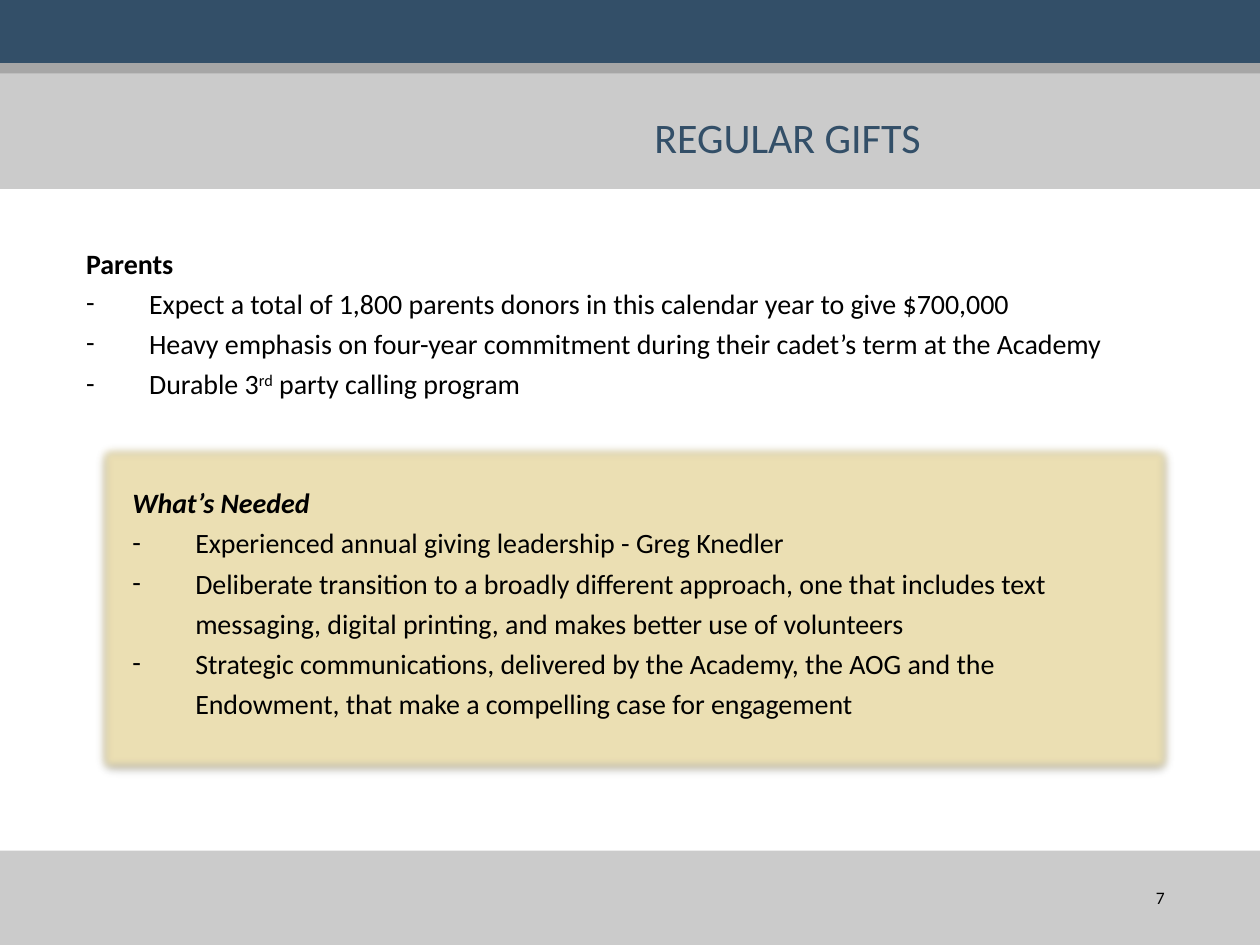
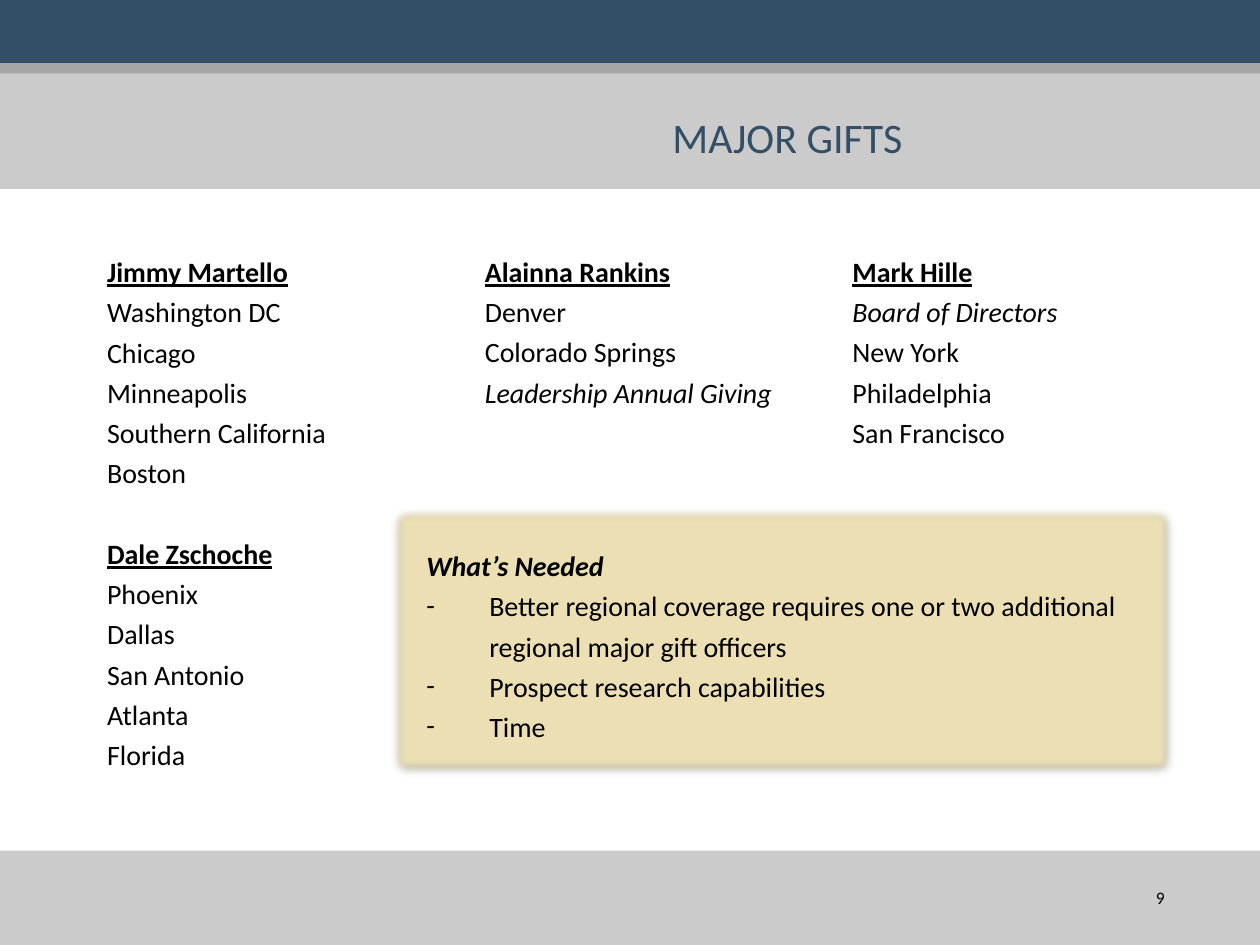
import lxml.etree
import pptx
import pptx.dml.color
import pptx.enum.shapes
import pptx.enum.text
import pptx.oxml.ns
import pptx.util

# Boxes are (left, top, width, height) in grid cells; the slide is 120 by 90 cells.
COLUMNS, ROWS = 120, 90
SLIDE_WIDTH, SLIDE_HEIGHT = pptx.util.Inches(10), pptx.util.Inches(7.5)

SLIDES = [
    {
        "title": "REGULAR GIFTS",
        "number": "7",
        "texts": [
            ((7, 22.2, 109, 57.8), [
                ("heading", "Parents"),
                ("point", "Expect a total of 1,800 parents donors in this calendar year to give $700,000"),
                ("point", "Heavy emphasis on four-year commitment during their cadet’s term at the Academy"),
                ("point", ("Durable 3", "rd", " party calling program")),
            ]),
        ],
        "panel": ((9, 42, 103, 32), [
            ("need", "What’s Needed"),
            ("point", "Experienced annual giving leadership - Greg Knedler"),
            ("point", "Deliberate transition to a broadly different approach, one that includes text "
                      "messaging, digital printing, and makes better use of volunteers"),
            ("point", "Strategic communications, delivered by the Academy, the AOG and the "
                      "Endowment, that make a compelling case for engagement"),
        ]),
    },
    {
        "title": "MAJOR GIFTS",
        "number": "9",
        "texts": [
            ((9, 23, 37, 61), [
                ("officer", "Jimmy Martello"),
                ("place", "Washington DC"),
                ("place", "Chicago"),
                ("place", "Minneapolis"),
                ("place", "Southern California"),
                ("place", "Boston"),
                ("officer", "Dale Zschoche"),
                ("place", "Phoenix"),
                ("place", "Dallas"),
                ("place", "San Antonio"),
                ("place", "Atlanta"),
                ("place", "Florida"),
            ]),
            ((45, 23, 38, 61), [
                ("officer", "Alainna Rankins"),
                ("place", "Denver"),
                ("place", "Colorado Springs"),
                ("role", "Leadership Annual Giving"),
            ]),
            ((80, 23, 38, 61), [
                ("officer", "Mark Hille"),
                ("role", "Board of Directors"),
                ("place", "New York"),
                ("place", "Philadelphia"),
                ("place", "San Francisco"),
            ]),
        ],
        "panel": ((37, 48, 75, 26), [
            ("need", "What’s Needed"),
            ("point", "Better regional coverage requires one or two additional regional major gift officers"),
            ("point", "Prospect research capabilities"),
            ("point", "Time"),
        ]),
    },
]

THEME = {
    "font": "Calibri",
    "navy": "334F68",
    "pale_gray": "CBCBCB",
    "mid_gray": "A6A6A6",
    "sand": "EBDFB3",
    "black": "000000",
    "title_size": 24,
    "body_size": 16,
    "number_size": 10,
}
BANDS = [
    ((0, 0, COLUMNS, 18), "pale_gray"),
    ((0, 81, COLUMNS, 9), "pale_gray"),
    ((0, 0, COLUMNS, 7), "mid_gray"),
    ((0, 0, COLUMNS, 6), "navy"),
]
TITLE_BOX = (37, 10, 76, 6)
NUMBER_BOX = (107, 84, 7, 3)
RUN_STYLES = {
    "heading": {"bold": True},
    "need": {"bold": True, "italic": True},
    "officer": {"bold": True, "underline": True},
    "role": {"italic": True},
    "place": {},
    "point": {},
}
PARAGRAPH_FORMAT = {
    "alignment": pptx.enum.text.PP_ALIGN.LEFT,
    "line_spacing": 1.2,
    "space_after": pptx.util.Pt(0),
}
GROUP_GAP = pptx.util.Pt(23)
HANGING_INDENT = pptx.util.Inches(0.5)
PANEL_INSET = pptx.util.Inches(0.3)
PANEL_EFFECTS = """
<a:effectLst xmlns:a="http://schemas.openxmlformats.org/drawingml/2006/main">
  <a:outerShdw blurRad="39370" dist="20320" dir="5400000" rotWithShape="0">
    <a:srgbClr val="000000"><a:alpha val="38000"/></a:srgbClr>
  </a:outerShdw>
  <a:softEdge rad="63500"/>
</a:effectLst>"""


def set_attributes(target, values):
    for name, value in values.items():
        setattr(target, name, value)


def color(name):
    return pptx.dml.color.RGBColor.from_string(THEME[name])


def place(box):
    """Turn a box in grid cells into slide lengths."""
    left, top, width, height = box
    cell_width, cell_height = SLIDE_WIDTH / COLUMNS, SLIDE_HEIGHT / ROWS
    return (round(left * cell_width), round(top * cell_height),
            round(width * cell_width), round(height * cell_height))


def move(shape, box):
    set_attributes(shape, dict(zip(("left", "top", "width", "height"), place(box))))


def add_rectangle(slide, box, fill):
    shape = slide.shapes.add_shape(pptx.enum.shapes.MSO_SHAPE.RECTANGLE, *place(box))
    shape.fill.solid()
    shape.fill.fore_color.rgb = color(fill)
    return shape


def add_run(paragraph, text, size, tint="black", **style):
    run = paragraph.add_run()
    run.text = text
    set_attributes(run.font, {"name": THEME["font"], "size": pptx.util.Pt(THEME[size]), **style})
    run.font.color.rgb = color(tint)
    return run


def set_bullet(paragraph, is_point):
    properties = paragraph._p.get_or_add_pPr()
    indent = HANGING_INDENT if is_point else 0
    properties.set("marL", str(indent))
    properties.set("indent", str(-indent))
    bullets = [("buFont", "typeface", THEME["font"]), ("buChar", "char", "-")]
    for tag, key, value in bullets if is_point else [("buNone", None, None)]:
        bullet = lxml.etree.SubElement(properties, pptx.oxml.ns.qn(f"a:{tag}"))
        if key:
            bullet.set(key, value)


def write_text(shape, entries):
    frame = shape.text_frame
    set_attributes(frame, {
        "word_wrap": True,
        "auto_size": pptx.enum.text.MSO_AUTO_SIZE.NONE,
        "vertical_anchor": pptx.enum.text.MSO_ANCHOR.TOP,
    })
    for index, (kind, text) in enumerate(entries):
        paragraph = frame.add_paragraph() if index else frame.paragraphs[0]
        set_attributes(paragraph, PARAGRAPH_FORMAT)
        starts_group = index and kind == "officer"
        paragraph.space_before = GROUP_GAP if starts_group else pptx.util.Pt(0)
        set_bullet(paragraph, kind == "point")
        pieces = (text,) if isinstance(text, str) else text
        for position, piece in enumerate(pieces):
            run = add_run(paragraph, piece, "body_size", **RUN_STYLES[kind])
            if position % 2:  # every second piece is superscript
                run._r.get_or_add_rPr().set("baseline", "30000")


def write_line(shape, box, text, size, tint, anchor):
    move(shape, box)
    set_attributes(shape.text_frame, {"word_wrap": True, "vertical_anchor": anchor})
    paragraph = shape.text_frame.paragraphs[0]
    paragraph.alignment = pptx.enum.text.PP_ALIGN.CENTER
    add_run(paragraph, text, size, tint)


def add_panel(slide, box, entries):
    panel = add_rectangle(slide, box, "sand")
    panel.line.color.rgb = color("black")
    panel.line.width = pptx.util.Pt(0.75)
    panel._element.spPr.append(lxml.etree.fromstring(PANEL_EFFECTS))
    sides = ("left", "top", "right", "bottom")
    set_attributes(panel.text_frame, {f"margin_{side}": PANEL_INSET for side in sides})
    write_text(panel, entries)


def add_bands(layout, slide):
    """Draw the bands once and hand them to the layout that all slides share."""
    for box, fill in BANDS:
        band = add_rectangle(slide, box, fill)
        band.line.fill.background()
        band.shadow.inherit = False
        layout.shapes.element.append(band.element)


def build_slide(slide, content):
    anchors = pptx.enum.text.MSO_ANCHOR
    write_line(slide.shapes.title, TITLE_BOX, content["title"], "title_size", "navy", anchors.TOP)
    number = slide.shapes.add_textbox(*place(NUMBER_BOX))
    write_line(number, NUMBER_BOX, content["number"], "number_size", "black", anchors.MIDDLE)
    add_panel(slide, *content["panel"])
    for index, (box, entries) in enumerate(content["texts"]):
        shape = slide.shapes.add_textbox(*place(box)) if index else slide.placeholders[1]
        move(shape, box)
        write_text(shape, entries)


def main():
    presentation = pptx.Presentation()
    set_attributes(presentation, {"slide_width": SLIDE_WIDTH, "slide_height": SLIDE_HEIGHT})
    layout = presentation.slide_layouts[1]
    for index, content in enumerate(SLIDES):
        slide = presentation.slides.add_slide(layout)
        if index == 0:
            add_bands(layout, slide)
        build_slide(slide, content)
    presentation.save("out.pptx")


if __name__ == "__main__":
    main()
